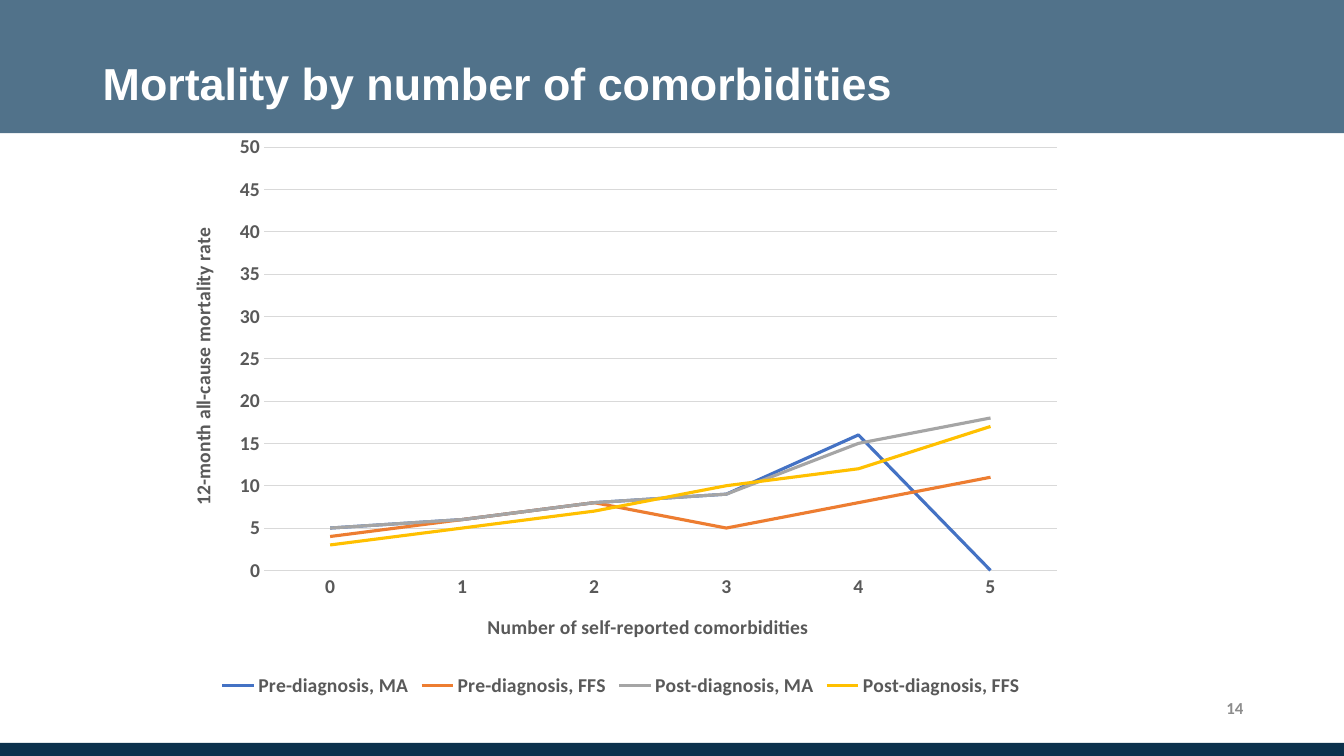
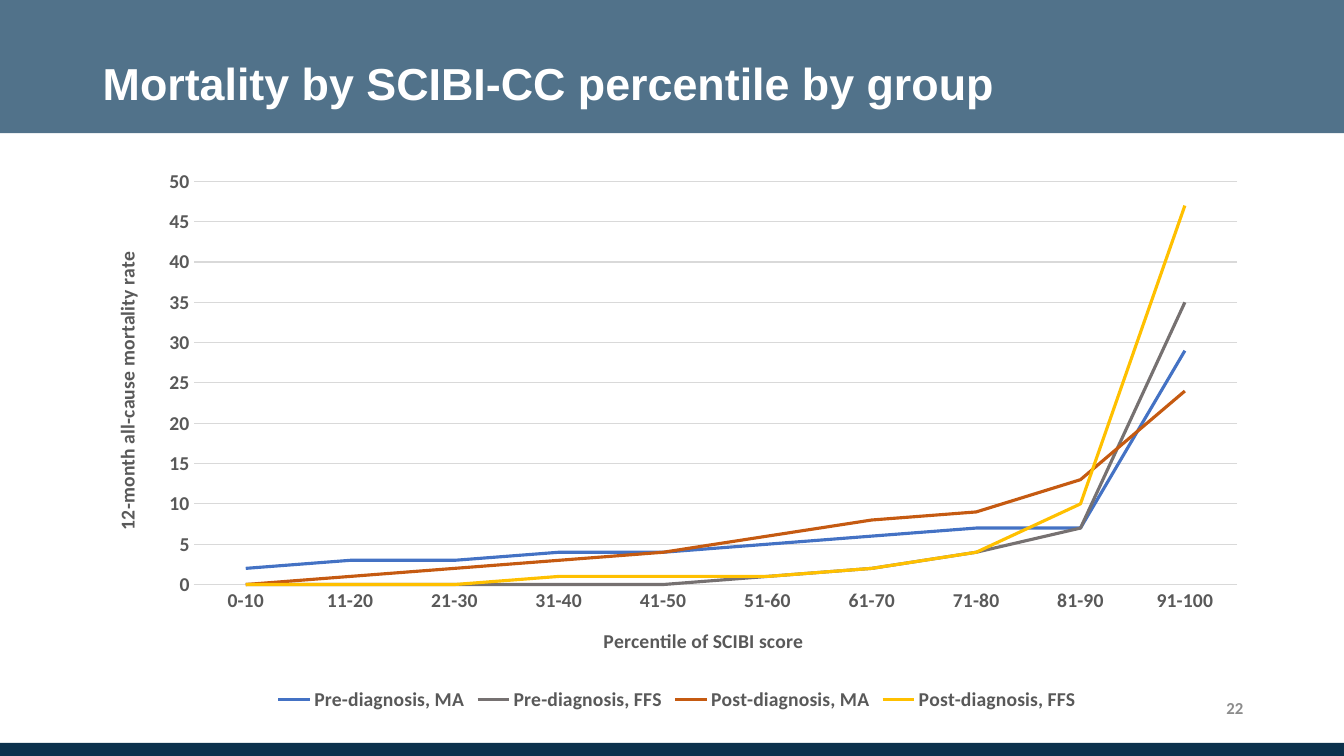
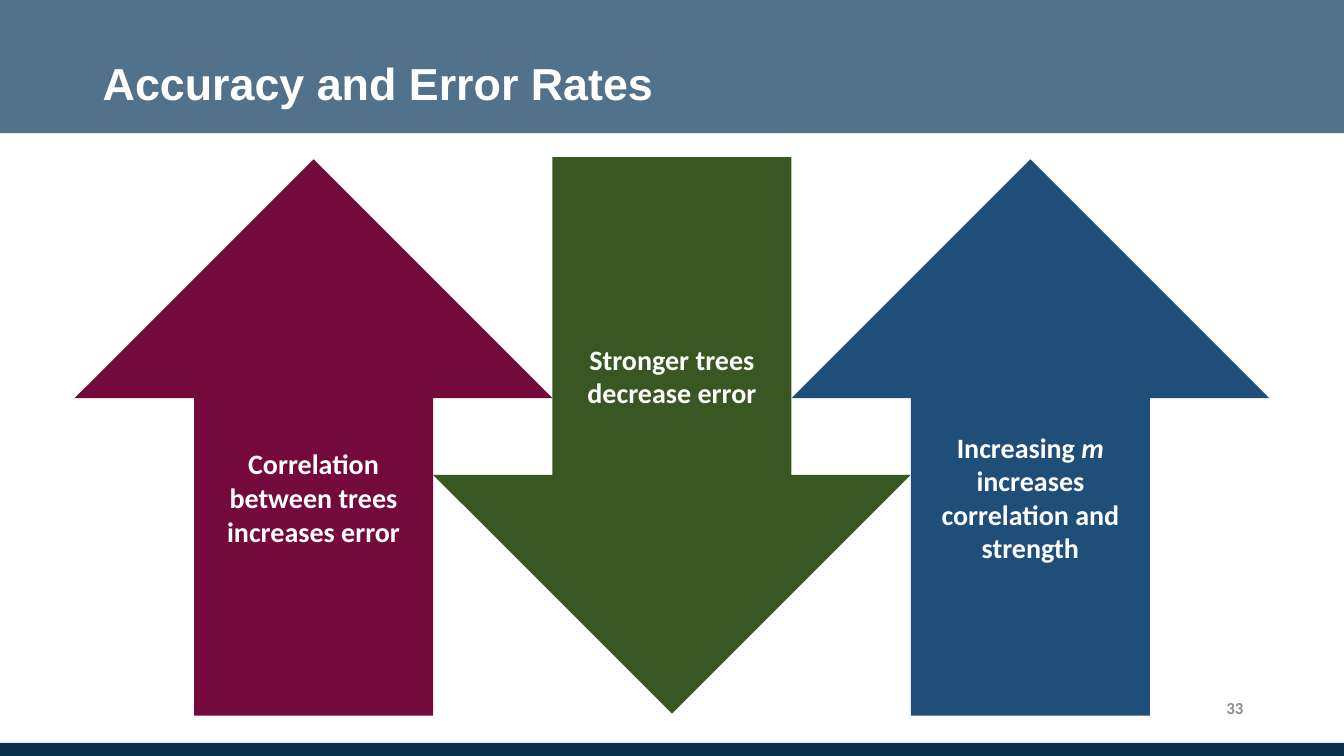
from lxml import etree
from pptx import Presentation
from pptx.chart.data import CategoryChartData
from pptx.dml.color import RGBColor
from pptx.enum.chart import XL_CHART_TYPE, XL_LEGEND_POSITION, XL_TICK_MARK
from pptx.enum.shapes import MSO_SHAPE
from pptx.enum.text import MSO_ANCHOR, PP_ALIGN
from pptx.oxml.ns import qn
from pptx.util import Inches, Pt

LINE = XL_CHART_TYPE.LINE
BOTTOM = XL_LEGEND_POSITION.BOTTOM
NO_TICK = XL_TICK_MARK.NONE
RECT, UP, DOWN = MSO_SHAPE.RECTANGLE, MSO_SHAPE.UP_ARROW, MSO_SHAPE.DOWN_ARROW
MIDDLE = MSO_ANCHOR.MIDDLE
LEFT, CENTER, RIGHT = PP_ALIGN.LEFT, PP_ALIGN.CENTER, PP_ALIGN.RIGHT

COLORS = {
    "white": "FFFFFF", "band": "51728A", "footer": "0C314C", "number": "8C8C8C",
    "label": "595959", "grid": "D9D9D9",
    "blue": "4472C4", "orange": "ED7D31", "silver": "A5A5A5", "yellow": "FFC000",
    "gray": "767171", "rust": "C55A11",
    "maroon": "740A3C", "green": "385723", "navy": "1F4E79",
}
HEAD_FONT, BODY_FONT = "Arial", "Calibri"
SLIDE_W, SLIDE_H = 13.33, 7.5
GROUPS = ["Pre-diagnosis, MA", "Pre-diagnosis, FFS",
          "Post-diagnosis, MA", "Post-diagnosis, FFS"]
# Bands and footer panels of every slide: box, fill, outlined
FRAME = [
    ((0.92, 6.84, 3.86, 0.45), "white", True),
    ((0, 0, SLIDE_W, 1.32), "band", False),
    ((0, 7.37, SLIDE_W, 0.13), "footer", False),
    ((9.9, 6.84, 3.15, 0.45), "white", False),
    ((0.92, 6.7, 3.86, 0.59), "white", True),
]


def rgb(name):
    return RGBColor.from_string(COLORS[name])


def style_font(font, size, color, name=BODY_FONT):
    font.name = name
    font.size = Pt(size)
    font.bold = True
    font.color.rgb = rgb(color)


def style_line(line, color, width):
    line.color.rgb = rgb(color)
    line.width = Pt(width)


def add_runs(tf, texts, size, color, name=BODY_FONT, align=LEFT):
    """Fill one paragraph; every second run is italic."""
    tf.word_wrap = True
    tf.vertical_anchor = MIDDLE
    p = tf.paragraphs[0]
    p.alignment = align
    for i, text in enumerate(texts):
        r = p.add_run()
        r.text = text
        style_font(r.font, size, color, name)
        r.font.italic = i % 2 == 1
    return p


def add_filled(s, kind, box, color, outlined=False):
    sp = s.shapes.add_shape(kind, *map(Inches, box))
    sp.shadow.inherit = False
    sp.fill.solid()
    sp.fill.fore_color.rgb = rgb(color)
    if outlined:
        style_line(sp.line, color, 1)
    else:
        sp.line.fill.background()
    return sp


def add_text(s, box, text, size, color, name=BODY_FONT, align=LEFT):
    tb = s.shapes.add_textbox(*map(Inches, box))
    return add_runs(tb.text_frame, [text], size, color, name, align)


def add_slide(prs, title, number):
    """Slide with the shared bands, number and title."""
    s = prs.slides.add_slide(prs.slide_layouts[6])
    for box, color, outlined in FRAME:
        add_filled(s, RECT, box, color, outlined)
    add_text(s, (7.59, 6.9, 4.84, 0.25), str(number), 12, "number", align=RIGHT)
    p = add_text(s, (0.92, 0.39, 9.85, 0.92), title, 32, "white", HEAD_FONT)
    p.line_spacing = 0.9
    return s


def set_layout(parent, index, chart_box, place):
    """Fix a chart part at a place given in slide inches: x, y and maybe w, h."""
    for old in parent.findall(qn("c:layout")):
        parent.remove(old)
    layout = etree.Element(qn("c:layout"))
    manual = etree.SubElement(layout, qn("c:manualLayout"))
    x, y, w, h = chart_box
    values = [("xMode", "edge"), ("yMode", "edge"),
              ("x", (place[0] - x) / w), ("y", (place[1] - y) / h)]
    if len(place) == 4:
        values.insert(0, ("layoutTarget", "inner"))
        values += [("w", place[2] / w), ("h", place[3] / h)]
    for tag, value in values:
        etree.SubElement(manual, qn("c:" + tag)).set("val", str(value))
    parent.insert(index, layout)


def style_axis(axis, title, rotation, chart_box, place):
    axis.major_tick_mark = axis.minor_tick_mark = NO_TICK
    style_font(axis.tick_labels.font, 14, "label")
    tf = axis.axis_title.text_frame
    r = tf.paragraphs[0].add_run()
    r.text = title
    style_font(r.font, 14, "label")
    tf._txBody.find(qn("a:bodyPr")).set("rot", str(rotation))
    set_layout(axis.axis_title._element, 1, chart_box, place)


def add_mortality_chart(s, box, plot, cats, cat_title, cat_at, val_at, rows):
    """Line chart of the four groups; rows are (color, values)."""
    data = CategoryChartData()
    data.categories = cats
    for group, (_, values) in zip(GROUPS, rows):
        data.add_series(group, values)
    chart = s.shapes.add_chart(LINE, *map(Inches, box), data).chart
    chart.has_title = False
    style_font(chart.font, 14, "label")
    set_layout(chart._chartSpace.chart.plotArea, 0, box, plot)

    # Axes
    cat, val = chart.category_axis, chart.value_axis
    style_axis(cat, cat_title, 0, box, cat_at)
    style_line(cat.format.line, "grid", 0.75)
    style_axis(val, "12-month all-cause mortality rate", -5400000, box, val_at)
    val.format.line.fill.background()
    val.minimum_scale, val.maximum_scale, val.major_unit = 0, 50, 5
    val.has_major_gridlines = True
    style_line(val.major_gridlines.format.line, "grid", 0.75)

    # Legend and series
    chart.has_legend = True
    chart.legend.position = BOTTOM
    chart.legend.include_in_layout = False
    style_font(chart.legend.font, 14, "label")
    chart.plots[0].vary_by_categories = False
    for series, (color, _) in zip(chart.plots[0].series, rows):
        series.smooth = False
        style_line(series.format.line, color, 2.25)


def add_arrows(s, arrows):
    """Interlocking block arrows, each shifted by three quarters of its width."""
    width, height = 4.74, 5.52
    for i, (kind, color, texts) in enumerate(arrows):
        top = 1.58 if kind == UP else 1.56
        sp = add_filled(s, kind, (0.74 + i * 0.75 * width, top, width, height), color)
        add_runs(sp.text_frame, texts, 20, "white", align=CENTER)


def main():
    prs = Presentation()
    prs.slide_width, prs.slide_height = Inches(SLIDE_W), Inches(SLIDE_H)

    # Comorbidities
    s = add_slide(prs, "Mortality by number of comorbidities", 14)
    add_mortality_chart(
        s, (1.66, 1.23, 9, 5.73), (2.62, 1.46, 7.86, 4.2),
        [str(n) for n in range(6)],
        "Number of self-reported comorbidities", (4.8, 6.05), (1.84, 2.22),
        [("blue", (5, 6, 8, 9, 16, 0)),
         ("orange", (4, 6, 8, 5, 8, 11)),
         ("silver", (5, 6, 8, 9, 15, 18)),
         ("yellow", (3, 5, 7, 10, 12, 17))])

    # Percentiles
    s = add_slide(prs, "Mortality by SCIBI-CC percentile by group", 22)
    deciles = ["0-10"] + [f"{n + 1}-{n + 10}" for n in range(10, 100, 10)]
    add_mortality_chart(
        s, (0.92, 1.57, 11.59, 5.53), (1.92, 1.8, 10.35, 4),
        deciles, "Percentile of SCIBI score", (5.95, 6.19), (1.09, 2.46),
        [("blue", (2, 3, 3, 4, 4, 5, 6, 7, 7, 29)),
         ("gray", (0, 0, 0, 0, 0, 1, 2, 4, 7, 35)),
         ("rust", (0, 1, 2, 3, 4, 6, 8, 9, 13, 24)),
         ("yellow", (0, 0, 0, 1, 1, 1, 2, 4, 10, 47))])

    # Error rates
    s = add_slide(prs, "Accuracy and Error Rates", 33)
    add_arrows(s, [
        (UP, "maroon", ["Correlation between trees increases error"]),
        (DOWN, "green", ["Stronger trees decrease error"]),
        (UP, "navy", ["Increasing ", "m", " increases correlation and strength"])])

    prs.save("out.pptx")


if __name__ == "__main__":
    main()
